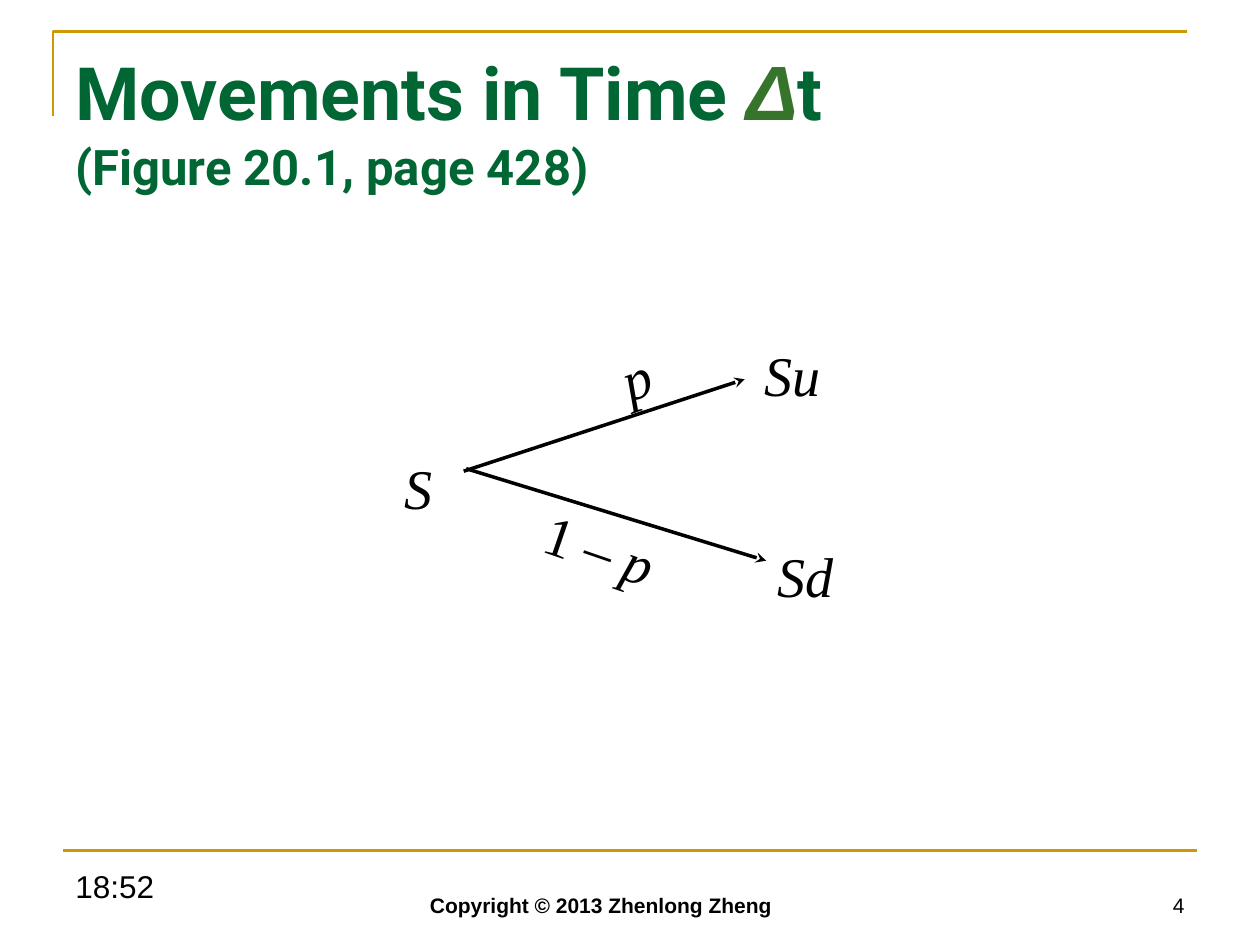
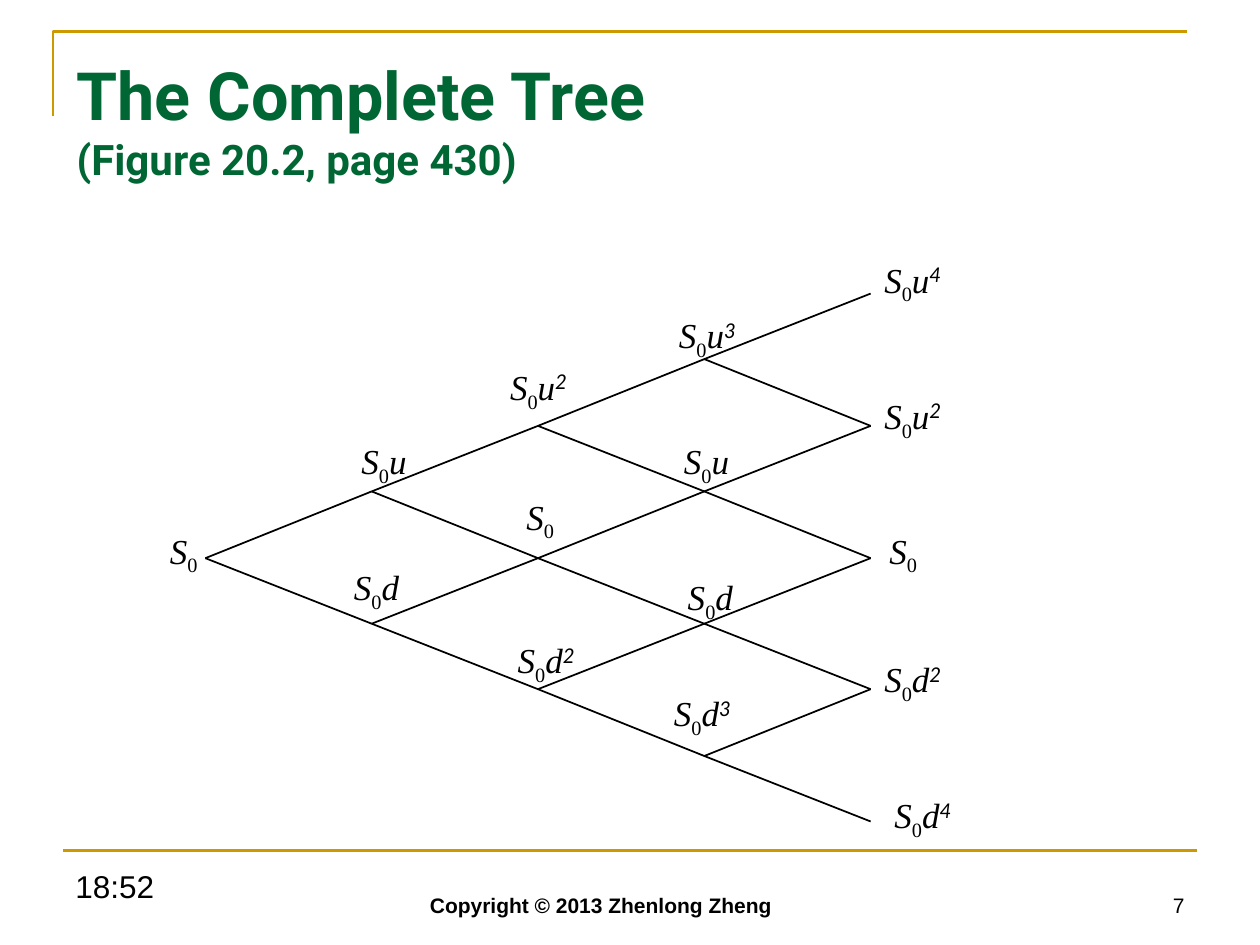
from lxml.etree import SubElement
from pptx import Presentation
from pptx.dml.color import RGBColor
from pptx.enum.shapes import MSO_CONNECTOR
from pptx.enum.text import MSO_ANCHOR, PP_ALIGN
from pptx.oxml.ns import qn
from pptx.util import Pt

PX = 9144  # EMU per px, 100 px to the inch

GOLD = RGBColor(0xCC, 0x99, 0x00)
GREEN = RGBColor(0x00, 0x66, 0x33)
LEAF = RGBColor(0x35, 0x74, 0x2A)
BLACK = RGBColor(0x00, 0x00, 0x00)

TITLE_FONT = "Roboto"
FOOTER_FONT = "Arial"
MATH_FONT = "Times New Roman"
POWER_FONT = "Lato"

# Tree geometry
STEPS = 4
TREE_LEFT, TREE_TOP = 163, 233
STEP_WIDTH, TREE_HEIGHT = 132, 419

# Left and top of each label, by step and then by number of down moves
LABEL_PLACES = [
    [(125, 415)],
    [(277, 344), (271, 444)],
    [(395, 285), (408, 388), (401, 502)],
    [(529, 244), (533, 344), (536, 452), (525, 544)],
    [(692, 200), (692, 308), (696, 415), (692, 517), (700, 625)],
]


class SlideBuilder:
    def __init__(self):
        self.deck = Presentation()
        self.deck.slide_width = 1000 * PX
        self.deck.slide_height = 750 * PX
        self.page = None

    def new_page(self, number):
        """Start a slide with its frame lines and footer."""
        self.page = self.deck.slides.add_slide(self.deck.slide_layouts[6])
        self.bracket([(42, 92), (42, 25), (942, 25)])
        self.line((50, 675), (950, 675), GOLD, 1.5)
        self.footer((50, 683, 233, 50), "18:52", size=18)
        self.footer((180, 683, 594, 50), "Copyright © 2013 Zhenlong Zheng",
                    PP_ALIGN.CENTER, MSO_ANCHOR.BOTTOM, bold=True)
        self.footer((717, 683, 233, 50), str(number),
                    PP_ALIGN.RIGHT, MSO_ANCHOR.BOTTOM)

    def bracket(self, points):
        builder = self.page.shapes.build_freeform(*points[0], scale=PX)
        builder.add_line_segments(points[1:], close=False)
        outline = builder.convert_to_shape()
        outline.shadow.inherit = False
        outline.fill.background()
        outline.line.color.rgb = GOLD
        outline.line.width = Pt(1.5)

    def line(self, start, end, color=BLACK, width=1, arrow=False):
        connector = self.page.shapes.add_connector(
            MSO_CONNECTOR.STRAIGHT, *(value * PX for value in start + end))
        connector.line.color.rgb = color
        connector.line.width = Pt(width)
        properties = connector._element.spPr
        if arrow:
            outline = properties.find(qn("a:ln"))
            SubElement(outline, qn("a:tailEnd"), type="stealth")
        SubElement(properties, qn("a:effectLst"))

    def text_box(self, place, align=PP_ALIGN.LEFT, anchor=MSO_ANCHOR.TOP, rotation=0):
        """Add an empty text box and return its paragraph."""
        box = self.page.shapes.add_textbox(*(value * PX for value in place))
        box.rotation = rotation
        frame = box.text_frame
        frame.word_wrap = True
        frame.vertical_anchor = anchor
        para = frame.paragraphs[0]
        para.alignment = align
        return para

    def span(self, para, text, size, font=MATH_FONT, color=BLACK,
             bold=False, italic=False, baseline=0):
        span = para.add_run()
        span.text = text
        span.font.size = Pt(size)
        span.font.name = font
        span.font.color.rgb = color
        span.font.bold = bold
        span.font.italic = italic
        if baseline:
            span._r.get_or_add_rPr().set("baseline", str(baseline * 1000))

    def title(self, place, heading, reference, size, reference_size):
        """Heading pieces are (text, style changes) pairs."""
        para = self.text_box(place)
        style = dict(size=size, font=TITLE_FONT, color=GREEN, bold=True)
        for text, changes in heading:
            self.span(para, text, **{**style, **changes})
        para.add_line_break()
        self.span(para, reference, **{**style, "size": reference_size})

    def footer(self, place, text, align=PP_ALIGN.LEFT, anchor=MSO_ANCHOR.TOP,
               size=12, bold=False):
        para = self.text_box(place, align, anchor)
        self.span(para, text, size, FOOTER_FONT, bold=bold)

    def symbol(self, place, text, rotation=0, upright=""):
        """A large italic symbol, with an optional upright part before it."""
        para = self.text_box(place, rotation=rotation)
        if upright:
            self.span(para, upright, 32)
        self.span(para, text, 32, italic=True)

    def price(self, place, power):
        """Price after a net number of up (positive) or down moves."""
        count = abs(power)
        width = (51, 65, 83)[min(count, 2)]
        para = self.text_box((*place, width, 44))
        self.span(para, "S", 20, italic=True)
        self.span(para, "0", 20, baseline=-25)
        if count:
            self.span(para, "u" if power > 0 else "d", 20, italic=True)
        if count > 1:
            self.span(para, str(count), 20, POWER_FONT, italic=True, baseline=30)


def tree_node(step, downs):
    row = STEPS - step + 2 * downs
    return (TREE_LEFT + step * STEP_WIDTH,
            TREE_TOP + round(row * TREE_HEIGHT / (2 * STEPS)))


def movements_page(slides):
    slides.new_page(4)
    delta = dict(size=44, font="Arial", color=LEAF, italic=True)
    slides.title((50, 30, 900, 125),
                 [("Movements in Time ", {}), ("Δ", delta), ("t", {})],
                 "(Figure 20.1, page 428)", 42, 28)

    # One step up or down
    slides.line((368, 374), (591, 301), width=2, arrow=True)
    slides.line((370, 372), (608, 445), width=2, arrow=True)
    slides.symbol((311, 355, 76, 63), "S")
    slides.symbol((597, 265, 76, 63), "Su")
    slides.symbol((607, 425, 78, 63), "Sd")

    # Probabilities along the arrows
    slides.symbol((484, 267, 42, 63), "p", rotation=340)
    slides.symbol((421, 411, 154, 63), "p", rotation=19, upright="1 – ")


def tree_page(slides):
    slides.new_page(7)
    slides.title((51, 38, 817, 192), [("The Complete Tree", {})],
                 "(Figure 20.2, page 430)", 38, 24)

    # Branches
    for step in range(STEPS):
        for downs in range(step + 1):
            for move in (0, 1):
                slides.line(tree_node(step, downs), tree_node(step + 1, downs + move))

    # Prices at the nodes
    for step, places in enumerate(LABEL_PLACES):
        for downs, place in enumerate(places):
            slides.price(place, step - 2 * downs)


def main():
    slides = SlideBuilder()
    movements_page(slides)
    tree_page(slides)
    slides.deck.save("out.pptx")


if __name__ == "__main__":
    main()
